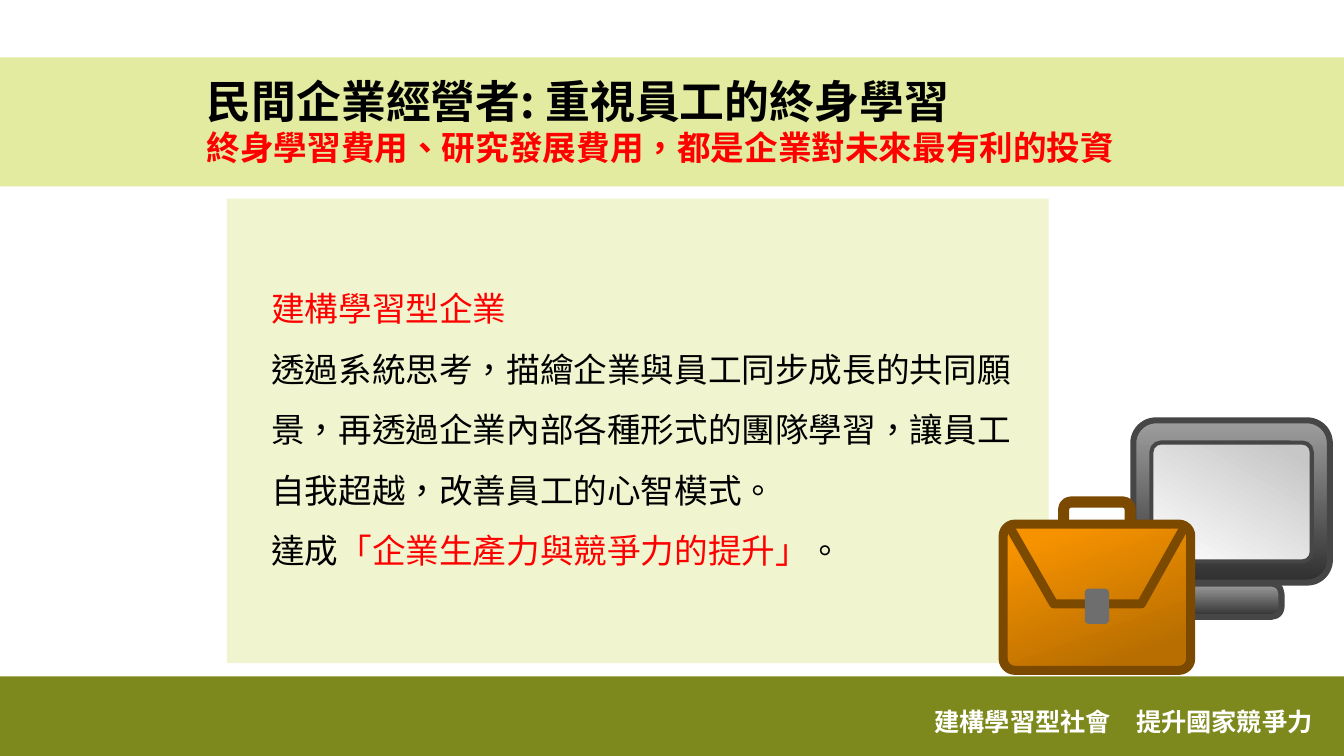
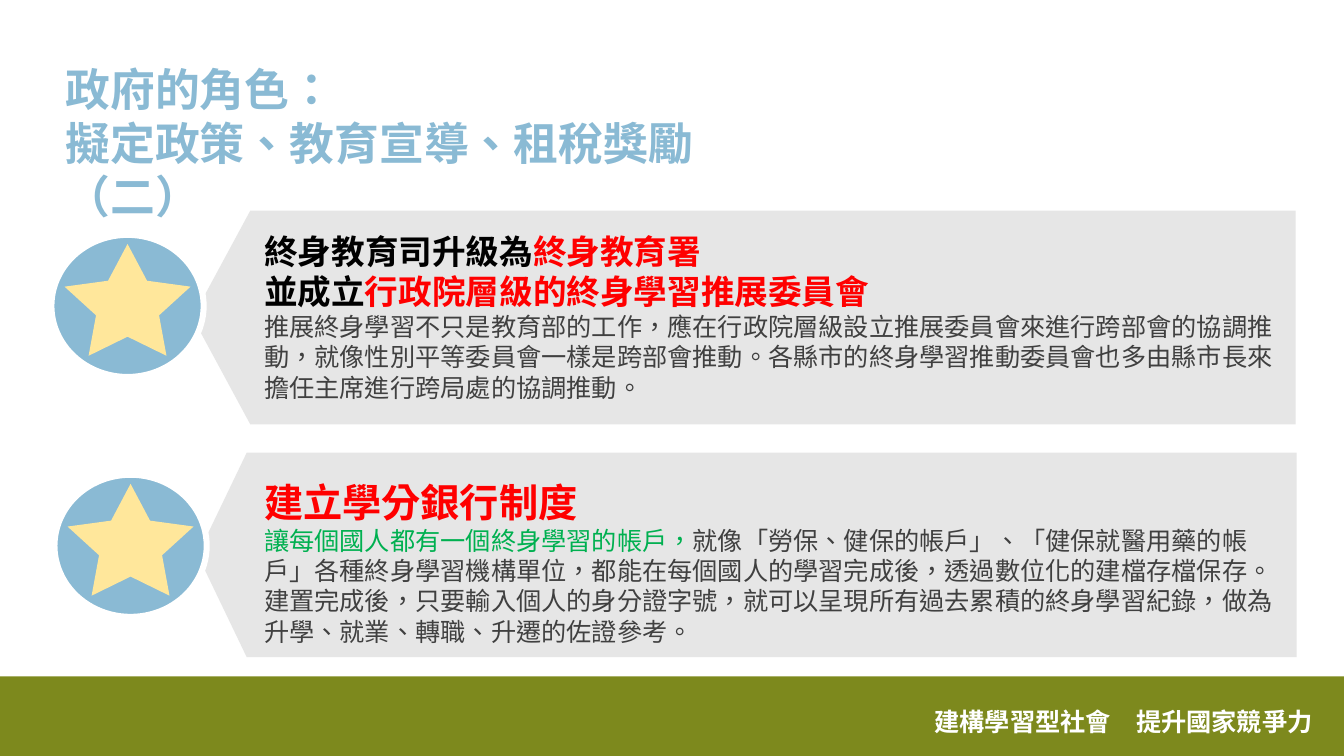
from dataclasses import dataclass

from lxml import etree
from pptx import Presentation
from pptx import util as u
from pptx.dml import color as c
from pptx.enum import shapes as kinds, text as t
from pptx.oxml import ns

PX = 9144


@dataclass(frozen=True)
class Theme:
    font: str = "Noto Sans CJK SC"
    language: str = "zh-TW"
    black: str = "000000"
    white: str = "FFFFFF"
    red: str = "FF0000"
    green: str = "00B050"
    grey_text: str = "404040"
    olive: str = "7D891D"
    title_band: str = "E2EBA0"
    pale_panel: str = "F0F5D0"
    grey_panel: str = "E6E6E6"
    blue: str = "8ABAD4"
    star: str = "FFE79B"
    casing_line: str = "464646"
    casing: tuple = (("2F2F2F", 0), ("9E9E9E", 1))
    screen: tuple = (("FFFFFF", 0), ("C7C7C7", 0.91))
    leather_line: str = "7B4900"
    leather: tuple = (("F69200", 0.13), ("B86E00", 0.85))
    clasp: str = "6E6E6E"
    title_size: int = 32
    heading_size: int = 28
    body_size: int = 24
    small_size: int = 18


THEME = Theme()
SLIDE_WIDTH, SLIDE_HEIGHT = 1333, 750
RECTANGLE = kinds.MSO_SHAPE.RECTANGLE
ROUNDED = kinds.MSO_SHAPE.ROUNDED_RECTANGLE


def px(value):
    return u.Emu(round(value * PX))


def rgb(value):
    return c.RGBColor.from_string(value)


def style_shape(shape, fill=None, line=None, weight=0, angle=0):
    shape.shadow.inherit = False
    if fill is None:
        shape.fill.background()
    elif isinstance(fill, tuple):
        shape.fill.gradient()
        shape.fill.gradient_angle = angle
        for stop, (color, position) in zip(shape.fill.gradient_stops, fill):
            stop.color.rgb = rgb(color)
            stop.position = position
    else:
        shape.fill.solid()
        shape.fill.fore_color.rgb = rgb(fill)
    if line:
        shape.line.color.rgb = rgb(line)
        shape.line.width = px(weight)
    else:
        shape.line.fill.background()
    return shape


def draw(shapes, kind, box, adjust=None, **style):
    shape = shapes.add_shape(kind, *map(px, box))
    if adjust is not None:
        shape.adjustments[0] = adjust
    return style_shape(shape, **style)


def write(paragraph, text, size=THEME.body_size, color=THEME.black, bold=False):
    run = paragraph.add_run()
    run.text = text
    run.font.size = u.Pt(size)
    run.font.bold = bold
    run.font.color.rgb = rgb(color)
    run.font.name = THEME.font
    properties = run.font._element
    properties.set("lang", THEME.language)
    latin = properties.find(ns.qn("a:latin"))
    east_asian = etree.Element(ns.qn("a:ea"), typeface=THEME.font)
    latin.addnext(east_asian)


def line(*runs, spacing=1.0, **text_format):
    return runs, spacing, text_format


def fill_text(shape, lines, wrap=True):
    frame = shape.text_frame
    frame.auto_size = t.MSO_AUTO_SIZE.NONE
    frame.word_wrap = wrap
    frame.vertical_anchor = t.MSO_ANCHOR.TOP
    for index, (runs, spacing, text_format) in enumerate(lines):
        paragraph = frame.add_paragraph() if index else frame.paragraphs[0]
        paragraph.alignment = t.PP_ALIGN.LEFT
        paragraph.line_spacing = spacing
        paragraph.space_before = u.Pt(0)
        properties = paragraph._p.get_or_add_pPr()
        properties.set("marL", "0")
        properties.set("indent", "0")
        etree.SubElement(properties, ns.qn("a:buNone"))
        for text, color in runs:
            write(paragraph, text, color=color, **text_format)


def place_text(placeholder, box, lines, wrap=True):
    placeholder.left, placeholder.top, placeholder.width, placeholder.height = map(px, box)
    placeholder.element.getparent().append(placeholder.element)
    fill_text(placeholder, lines, wrap)


def add_footer(slide, box):
    left, top, width, height = box
    draw(slide.shapes, RECTANGLE, box, fill=THEME.olive)
    caption = slide.shapes.add_textbox(px(left + width - 416), px(top + 25), px(399), px(40))
    fill_text(caption, [line(("建構學習型社會　提升國家競爭力", THEME.white),
                             size=THEME.small_size, bold=True)], wrap=False)


def add_slide(presentation, layout_index):
    slide = presentation.slides.add_slide(presentation.slide_layouts[layout_index])
    add_footer(slide, (0, 671, SLIDE_WIDTH, 80))
    return slide


def add_title_band(slide, box, title, subtitle):
    left, top, width, height = box
    draw(slide.shapes, RECTANGLE, box, fill=THEME.title_band)
    place_text(slide.shapes.title, (left + 195, top + 11, 929, 104), [
        line((title, THEME.black), size=THEME.title_size, bold=True),
        line((subtitle, THEME.red), bold=True),
    ], wrap=False)


def add_text_panel(slide, box, lines):
    left, top, width, height = box
    draw(slide.shapes, RECTANGLE, box, fill=THEME.pale_panel)
    place_text(slide.placeholders[1], (left + 34, top + 64, width - 39, 306), lines)


def add_monitor(slide, left, top):
    shapes = slide.shapes.add_group_shape().shapes
    parts = [
        ((0, 0, 195, 161), 0.14, THEME.casing, 6, 90),
        ((48, 162, 99, 33), 0.3, THEME.casing, 6, 90),
        ((18, 22, 159, 118), 0.08, THEME.screen, 4, 60),
    ]
    for (x, y, width, height), radius, fill, weight, angle in parts:
        draw(shapes, ROUNDED, (left + x, top + y, width, height), radius, fill=fill,
             line=THEME.casing_line, weight=weight, angle=angle)


def add_briefcase(slide, left, top):
    shapes = slide.shapes.add_group_shape().shapes
    draw(shapes, ROUNDED, (left + 60, top - 22, 66, 39), 0.18,
         line=THEME.leather_line, weight=11)
    draw(shapes, ROUNDED, (left, top, 186, 145), 0.08, fill=THEME.leather,
         line=THEME.leather_line, weight=9, angle=290)
    corners = [(7, 4), (50, 79), (137, 79), (179, 4)]
    points = [(left + x, top + y) for x, y in corners]
    builder = shapes.build_freeform(*points[0], scale=PX)
    builder.add_line_segments(points[1:], close=False)
    style_shape(builder.convert_to_shape(), line=THEME.leather_line, weight=9)
    draw(shapes, ROUNDED, (left + 81, top + 64, 24, 35), 0.17, fill=THEME.clasp)


def add_star_badge(slide, left, top):
    draw(slide.shapes, kinds.MSO_SHAPE.OVAL, (left, top, 151, 141),
         fill=THEME.blue, line=THEME.white, weight=6)
    draw(slide.shapes, kinds.MSO_SHAPE.STAR_5_POINT, (left + 13, top + 9, 125, 111),
         0.25, fill=THEME.star)


def add_policy_panel(slide, placeholder, box, point, badge, text_box, lines):
    plate = draw(slide.shapes, kinds.MSO_SHAPE.PENTAGON, box, point, fill=THEME.grey_panel)
    plate.rotation = 180
    left, top = box[:2]
    x, y, width, height = text_box
    place_text(placeholder, (left + x, top + y, width, height), lines)
    add_star_badge(slide, left + badge[0], top + badge[1])


def build_enterprise_slide(presentation):
    slide = add_slide(presentation, 1)
    add_title_band(slide, (0, 57, SLIDE_WIDTH, 128),
                   "民間企業經營者: 重視員工的終身學習",
                   "終身學習費用、研究發展費用，都是企業對未來最有利的投資")
    add_text_panel(slide, (225, 197, 815, 461), [
        line(("建構學習型企業", THEME.red), spacing=1.5),
        line(("透過系統思考，描繪企業與員工同步成長的共同願景，再透過企業內部各種形式的"
              "團隊學習，讓員工自我超越，改善員工的心智模式。", THEME.black), spacing=1.5),
        line(("達成", THEME.black), ("「企業生產力與競爭力的提升」", THEME.red),
             ("。", THEME.black), spacing=1.5),
    ])
    add_monitor(slide, 1124, 417)
    add_briefcase(slide, 995, 520)


def build_government_slide(presentation):
    slide = add_slide(presentation, 3)
    place_text(slide.shapes.title, (55, 56, 732, 118), [
        line((text, THEME.blue), size=THEME.title_size, bold=True)
        for text in ("政府的角色：", "擬定政策、教育宣導、租稅獎勵（二）")
    ])
    first_body, second_body = slide.placeholders[1], slide.placeholders[2]
    add_policy_panel(slide, first_body, (191, 209, 1094, 212), 0.27, (-140, 24),
                     (61, 15, 1030, 182), [
        line(("終身教育司升級為", THEME.black), ("終身教育署", THEME.red), bold=True),
        line(("並成立", THEME.black), ("行政院層級的終身學習推展委員會", THEME.red), bold=True),
        line(("推展終身學習不只是教育部的工作，應在行政院層級設立推展委員會來進行跨部會的"
              "協調推動，就像性別平等委員會一樣是跨部會推動。各縣市的終身學習推動委員會也"
              "多由縣市長來擔任主席進行跨局處的協調推動。", THEME.grey_text),
             size=THEME.small_size),
    ])
    add_policy_panel(slide, second_body, (196, 449, 1090, 203), 0.24, (-142, 22),
                     (56, -3, 1027, 202), [
        line(("建立學分銀行制度", THEME.red), spacing=1.5, size=THEME.heading_size, bold=True),
        line(("讓每個國人都有一個終身學習的帳戶，", THEME.green),
             ("就像「勞保、健保的帳戶」、「健保就醫用藥的帳戶」各種終身學習機構單位，"
              "都能在每個國人的學習完成後，透過數位化的建檔存檔保存。", THEME.grey_text),
             size=THEME.small_size),
        line(("建置完成後，只要輸入個人的身分證字號，就可以呈現所有過去累積的終身學習紀錄，"
              "做為升學、就業、轉職、升遷的佐證參考。", THEME.grey_text),
             size=THEME.small_size),
    ])


def main():
    presentation = Presentation()
    presentation.slide_width = px(SLIDE_WIDTH)
    presentation.slide_height = px(SLIDE_HEIGHT)
    build_enterprise_slide(presentation)
    build_government_slide(presentation)
    presentation.save("out.pptx")


if __name__ == "__main__":
    main()
